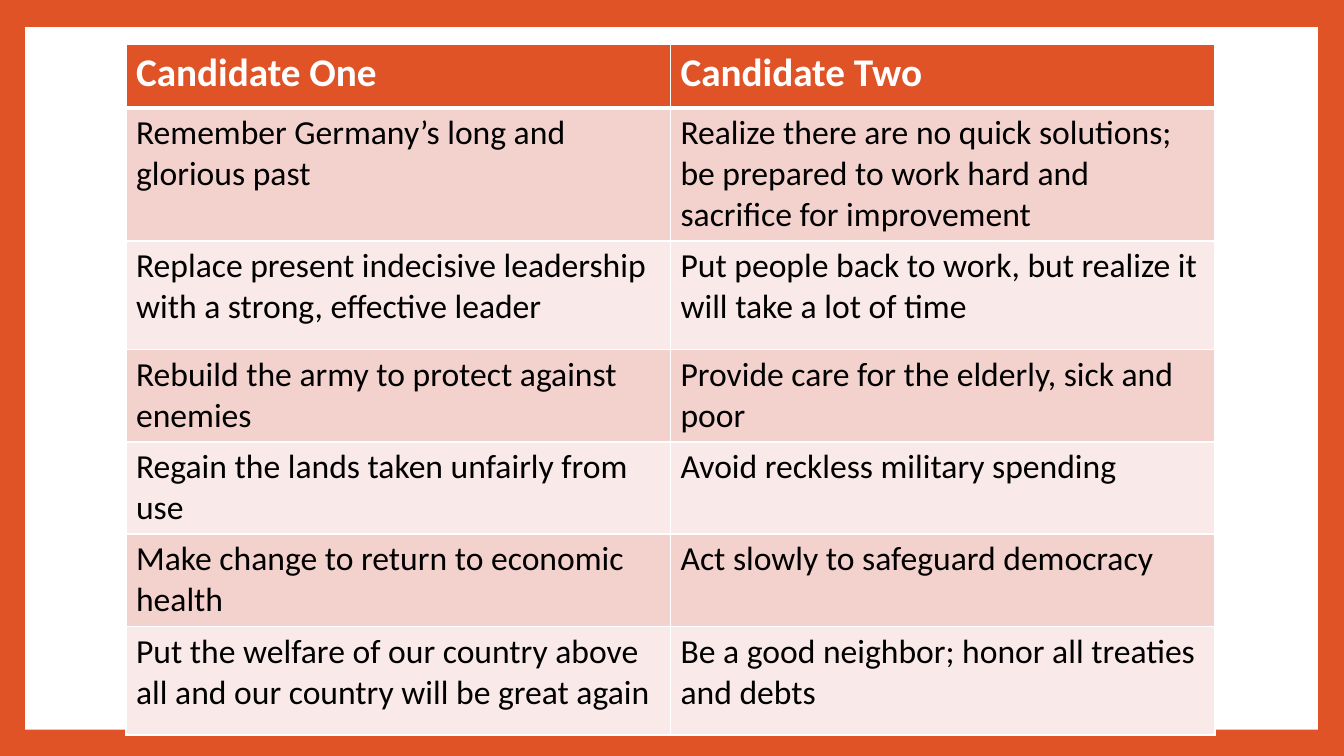
from dataclasses import dataclass

from lxml.etree import SubElement
from pptx import Presentation
from pptx.dml.color import RGBColor
from pptx.enum.shapes import MSO_SHAPE
from pptx.oxml.ns import qn
from pptx.util import Inches, Pt


@dataclass(frozen=True)
class Theme:
    font: str = "Calibri"
    accent: str = "DF5327"
    paper: str = "FFFFFF"
    ink: str = "000000"
    bands: tuple = ("F3D1CD", "F9E9E8")
    header_size: int = 28
    body_size: int = 24
    rule: int = 1
    header_rule: int = 3


PLATFORMS = [
    ("Candidate One", "Candidate Two"),
    ("Remember Germany’s long and glorious past",
     "Realize there are no quick solutions; be prepared to work hard and sacrifice for improvement"),
    ("Replace present indecisive leadership with a strong, effective leader",
     "Put people back to work, but realize it will take a lot of time"),
    ("Rebuild the army to protect against enemies",
     "Provide care for the elderly, sick and poor"),
    ("Regain the lands taken unfairly from use",
     "Avoid reckless military spending"),
    ("Make change to return to economic health",
     "Act slowly to safeguard democracy"),
    ("Put the welfare of our country above all and our country will be great again",
     "Be a good neighbor; honor all treaties and debts"),
]
ROW_HEIGHTS = [12.6, 25.4, 21.6, 17.6, 17.6, 17.6, 21.6]


def grid(units):
    """Turn grid units, twenty to the inch, into a length."""
    return Inches(units / 20)


class SlideBuilder:
    def __init__(self, slide, theme):
        self.slide = slide
        self.theme = theme

    def background(self):
        fill = self.slide.background.fill
        fill.solid()
        fill.fore_color.rgb = RGBColor.from_string(self.theme.accent)

    def panel(self, left, top, width, height):
        panel = self.slide.shapes.add_shape(
            MSO_SHAPE.RECTANGLE, *map(grid, (left, top, width, height)))
        panel.shadow.inherit = False
        panel.fill.solid()
        panel.fill.fore_color.rgb = RGBColor.from_string(self.theme.paper)
        panel.line.fill.background()

    def comparison(self, left, top, width, entries, heights):
        columns = len(entries[0])
        table = self.slide.shapes.add_table(
            len(entries), columns, *map(grid, (left, top, width, sum(heights)))).table
        for column in table.columns:
            column.width = grid(width / columns)
        for index, (row, height, texts) in enumerate(zip(table.rows, heights, entries)):
            row.height = grid(height)
            for cell, text in zip(row.cells, texts):
                self.cell(cell, text, index)

    def cell(self, cell, text, row):
        theme = self.theme
        header = row == 0
        self.borders(cell, top=theme.header_rule if row == 1 else theme.rule,
                     bottom=theme.header_rule if header else theme.rule)
        cell.fill.solid()
        cell.fill.fore_color.rgb = RGBColor.from_string(
            theme.accent if header else theme.bands[(row - 1) % 2])
        cell.text = text
        font = cell.text_frame.paragraphs[0].font
        font.name = theme.font
        font.bold = header
        font.size = Pt(theme.header_size if header else theme.body_size)
        font.color.rgb = RGBColor.from_string(theme.paper if header else theme.ink)

    def borders(self, cell, top, bottom):
        properties = cell._tc.get_or_add_tcPr()
        rule = self.theme.rule
        for side, points in (("L", rule), ("R", rule), ("T", top), ("B", bottom)):
            border = SubElement(properties, qn(f"a:ln{side}"), w=str(Pt(points)))
            fill = SubElement(border, qn("a:solidFill"))
            SubElement(fill, qn("a:srgbClr"), val=self.theme.paper)


def main():
    deck = Presentation()
    deck.slide_width, deck.slide_height = Inches(13.33), Inches(7.5)
    blank_layout = deck.slide_layouts[6]
    builder = SlideBuilder(deck.slides.add_slide(blank_layout), Theme())
    builder.background()
    builder.panel(5, 5.4, 256.4, 139.4)
    builder.comparison(25, 8.8, 216, PLATFORMS, ROW_HEIGHTS)
    deck.save("out.pptx")


if __name__ == "__main__":
    main()
